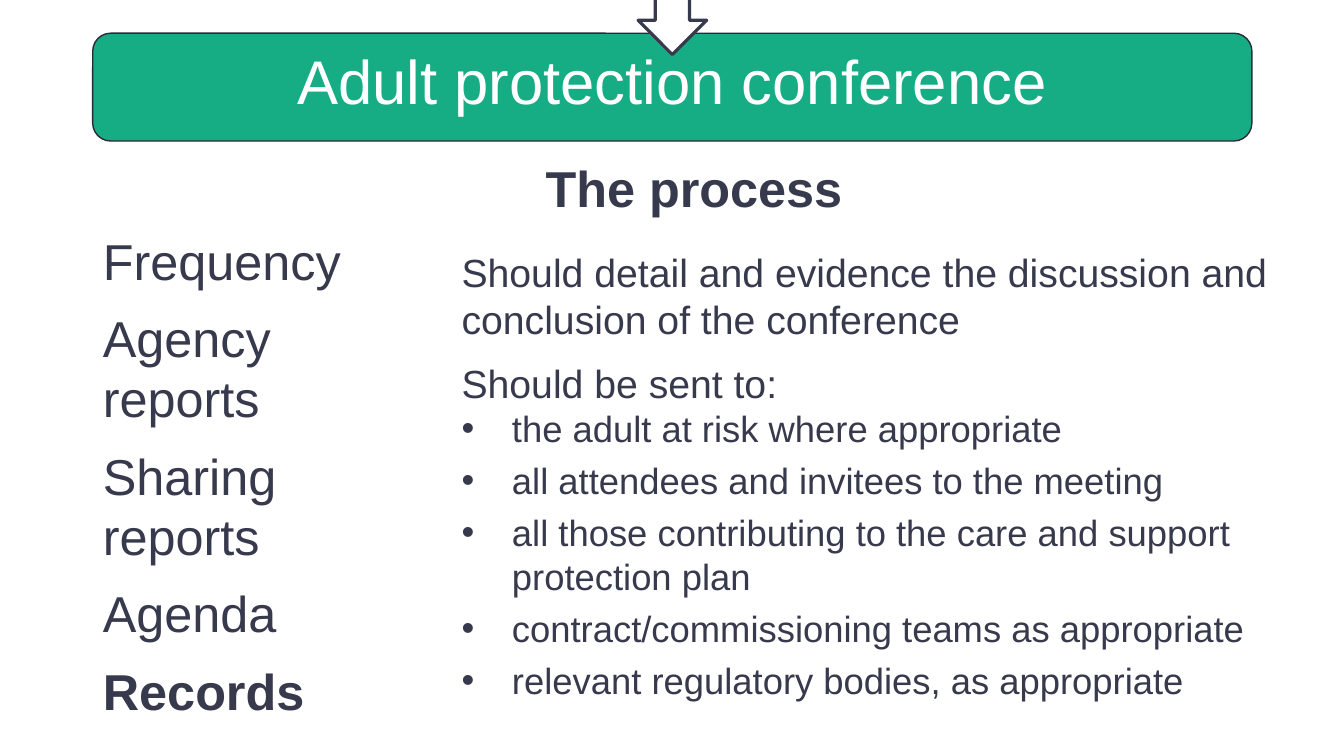
from dataclasses import dataclass

from lxml.etree import SubElement
from pptx import Presentation
from pptx.dml.color import RGBColor
from pptx.enum.shapes import MSO_SHAPE as Preset
from pptx.enum.text import MSO_ANCHOR as Anchor, MSO_AUTO_SIZE as AutoSize, PP_ALIGN as Align
from pptx.oxml.ns import qn
from pptx.shapes.autoshape import Shape
from pptx.slide import Slide
from pptx.util import Pt

GREEN = RGBColor(0x16, 0xAD, 0x85)
OUTLINE = RGBColor(0x29, 0x2A, 0x38)
INK = RGBColor(0x37, 0x39, 0x4C)
WHITE = RGBColor(0xFF, 0xFF, 0xFF)
FONT = "Arial"
TWO_CONTENT = 3
MARGIN = 66.25
BULLET_INDENT = 36


@dataclass(frozen=True)
class Area:
    left: float
    top: float
    width: float
    height: float


@dataclass(frozen=True)
class Line:
    text: str
    size: float
    after: float = 0
    color: RGBColor = INK
    bold: bool = False
    bullet: bool = False
    align: Align = Align.LEFT
    spacing: float = 1.0


BANNER = Area(MARGIN, 23.75, 828, 77)
ARROW = Area(455.75, -33, 49, 72)
HEADING = Area(MARGIN, 113.75, 859, 46.8)
TOPICS = Area(MARGIN, 160.5, 234.75, 361.5)
DETAILS = Area(322.5, 173.5, 616.5, 348.5)

TITLE_LINE = Line("Adult protection conference", 44, color=WHITE, align=Align.CENTER, spacing=0.8)
HEADING_LINE = Line("The process", 36, after=6, bold=True, align=Align.CENTER, spacing=0.9)
TOPIC_LINES = [
    Line(topic, 36, after=12, bold=topic == "Records")
    for topic in ("Frequency", "Agency reports", "Sharing reports", "Agenda", "Records")
]
RECIPIENTS = (
    "the adult at risk where appropriate",
    "all attendees and invitees to the meeting",
    "all those contributing to the care and support protection plan",
    "contract/commissioning teams as appropriate",
    "relevant regulatory bodies, as appropriate",
)
DETAIL_LINES = [
    Line("Should detail and evidence the discussion and conclusion of the conference", 28, after=12),
    Line("Should be sent to:", 28),
    *(Line(recipient, 26, after=6, bullet=True) for recipient in RECIPIENTS),
]


def place(box: Shape, area: Area) -> None:
    box.left, box.top = Pt(area.left), Pt(area.top)
    box.width, box.height = Pt(area.width), Pt(area.height)


def write(box: Shape, lines: list[Line], anchor: Anchor = Anchor.TOP) -> None:
    frame = box.text_frame
    frame.word_wrap = True
    frame.auto_size = AutoSize.NONE
    frame.vertical_anchor = anchor
    for index, line in enumerate(lines):
        para = frame.add_paragraph() if index else frame.paragraphs[0]
        para.text = line.text
        para.alignment = line.align
        para.line_spacing = line.spacing
        para.space_before, para.space_after = Pt(0), Pt(line.after)
        set_bullet(para, line.bullet)
        font = para.font
        font.name, font.size, font.bold = FONT, Pt(line.size), line.bold
        font.color.rgb = line.color


def set_bullet(para, shown: bool) -> None:
    """Give the paragraph a hanging bullet, or clear the inherited one."""
    properties = para._p.get_or_add_pPr()
    indent = Pt(BULLET_INDENT) if shown else 0
    properties.set("marL", str(indent))
    properties.set("indent", str(-indent))
    if shown:
        SubElement(properties, qn("a:buFont"), typeface=FONT)
        SubElement(properties, qn("a:buChar"), char="•")
    else:
        SubElement(properties, qn("a:buNone"))


def add_preset(page: Slide, preset: Preset, area: Area, fill: RGBColor,
               outline: RGBColor, weight: float) -> Shape:
    shape = page.shapes.add_shape(preset, 0, 0, 0, 0)
    place(shape, area)
    shape.shadow.inherit = False
    shape.fill.solid()
    shape.fill.fore_color.rgb = fill
    shape.line.color.rgb = outline
    shape.line.width = Pt(weight)
    return shape


def main() -> None:
    deck = Presentation()
    deck.slide_width, deck.slide_height = Pt(960), Pt(540)
    page = deck.slides.add_slide(deck.slide_layouts[TWO_CONTENT])
    title, topics, details = page.placeholders

    banner = add_preset(page, Preset.ROUNDED_RECTANGLE, BANNER, GREEN, OUTLINE, 1)
    title.element.addprevious(banner.element)
    place(title, BANNER)
    write(title, [TITLE_LINE], Anchor.MIDDLE)
    add_preset(page, Preset.DOWN_ARROW, ARROW, WHITE, INK, 2.25)

    heading = page.shapes.add_textbox(0, 0, 0, 0)
    place(heading, HEADING)
    write(heading, [HEADING_LINE])

    for box, area, lines in ((topics, TOPICS, TOPIC_LINES), (details, DETAILS, DETAIL_LINES)):
        place(box, area)
        write(box, lines)

    deck.save("out.pptx")


if __name__ == "__main__":
    main()
